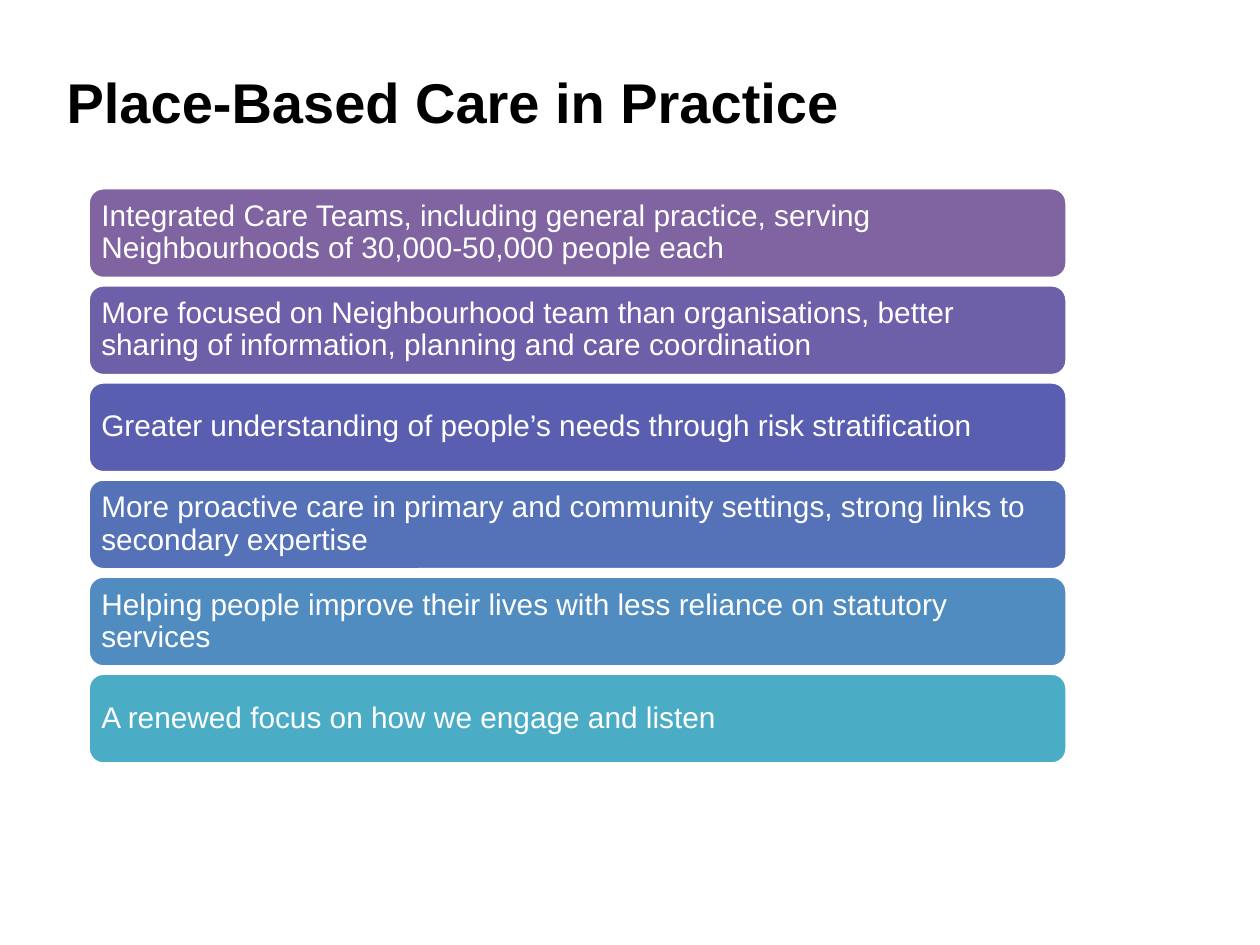
from pptx import Presentation
from pptx import util as u
from pptx.dml.color import RGBColor
from pptx.enum import shapes, text

Pt = u.Pt
FONT = "Arial"
PRACTICES = [
    ("Integrated Care Teams, including general practice, serving \vNeighbourhoods of 30,000-50,000 people each", "8064A2"),
    ("More focused on Neighbourhood team than organisations, better sharing of information, planning and care coordination", "6E5FA9"),
    ("Greater understanding of people’s needs through risk stratification", "5A5EB1"),
    ("More proactive care in primary and community settings, strong links to secondary expertise", "5572B8"),
    ("Helping people improve their lives with less reliance on statutory services", "508CBF"),
    ("A renewed focus on how we engage and listen", "4BACC6"),
]


def colour(value):
    return RGBColor.from_string(value)


def write(frame, words, size, hue, bold=False):
    frame.word_wrap = True
    line = frame.paragraphs[0]
    line.text = words
    line.alignment = text.PP_ALIGN.LEFT
    line.font.name = FONT
    line.font.size = Pt(size)
    line.font.bold = bold
    line.font.color.rgb = colour(hue)
    return line


def add_title(slide, left, top, width, height):
    heading = slide.shapes.add_textbox(Pt(left), Pt(top), Pt(width), Pt(height))
    write(heading.text_frame, "Place-Based Care in Practice", 32, "000000", True)


def add_practices(slide, left, top, width, height, gap=3.6):
    bar_height = (height + gap) / len(PRACTICES) - gap
    for row, (words, fill) in enumerate(PRACTICES):
        bar = slide.shapes.add_shape(
            shapes.MSO_SHAPE.ROUNDED_RECTANGLE,
            Pt(left), Pt(top + row * (bar_height + gap)), Pt(width), Pt(bar_height))
        bar.shadow.inherit = False
        bar.fill.solid()
        bar.fill.fore_color.rgb = colour(fill)
        bar.line.color.rgb = colour("FFFFFF")
        bar.line.width = Pt(2)
        frame = bar.text_frame
        frame.margin_left = frame.margin_right = Pt(5)
        frame.margin_top = frame.margin_bottom = Pt(5)
        frame.vertical_anchor = text.MSO_ANCHOR.MIDDLE
        write(frame, words, 17, "FFFFFF").line_spacing = 0.9


def main():
    deck = Presentation()
    deck.slide_width, deck.slide_height = Pt(720), Pt(540)
    slide = deck.slides.add_slide(deck.slide_layouts[6])
    add_practices(slide, 50.4, 107.3, 559.4, 329.3)
    add_title(slide, 31, 35.3, 504.7, 62)
    deck.save("out.pptx")


if __name__ == "__main__":
    main()
